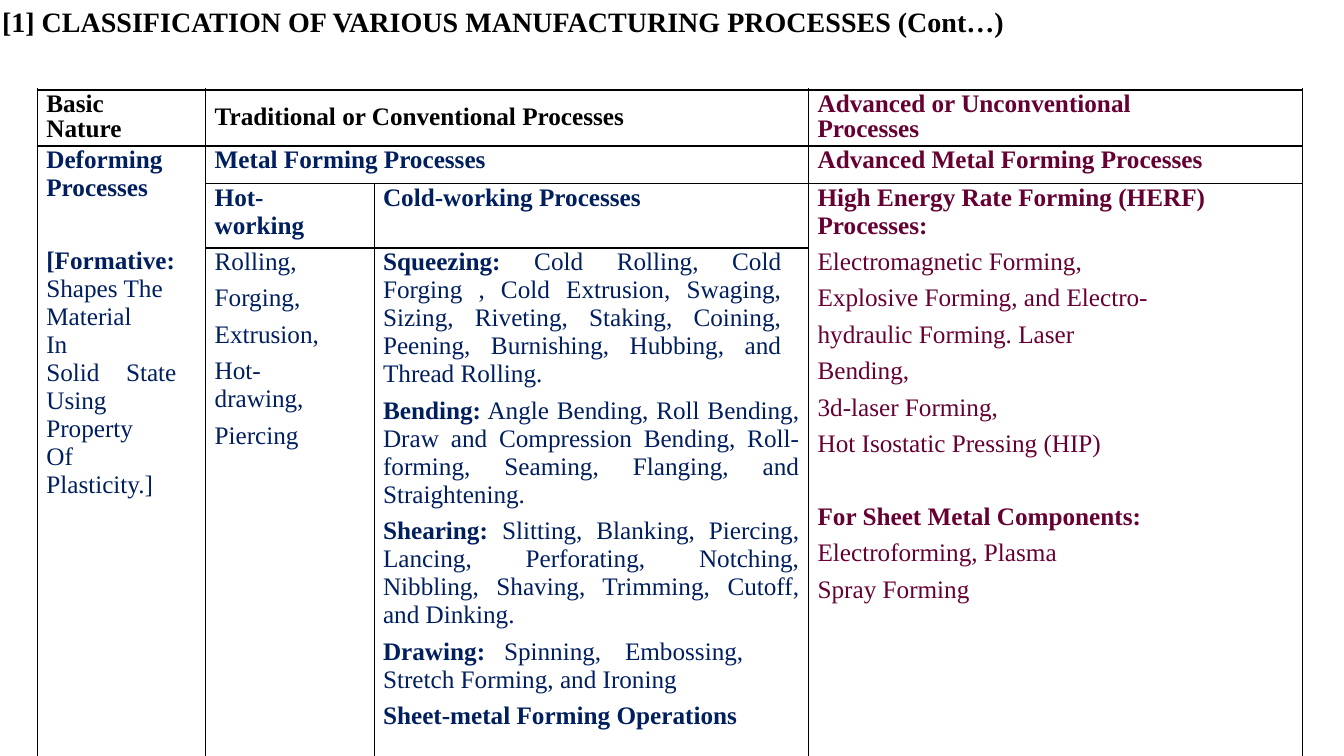
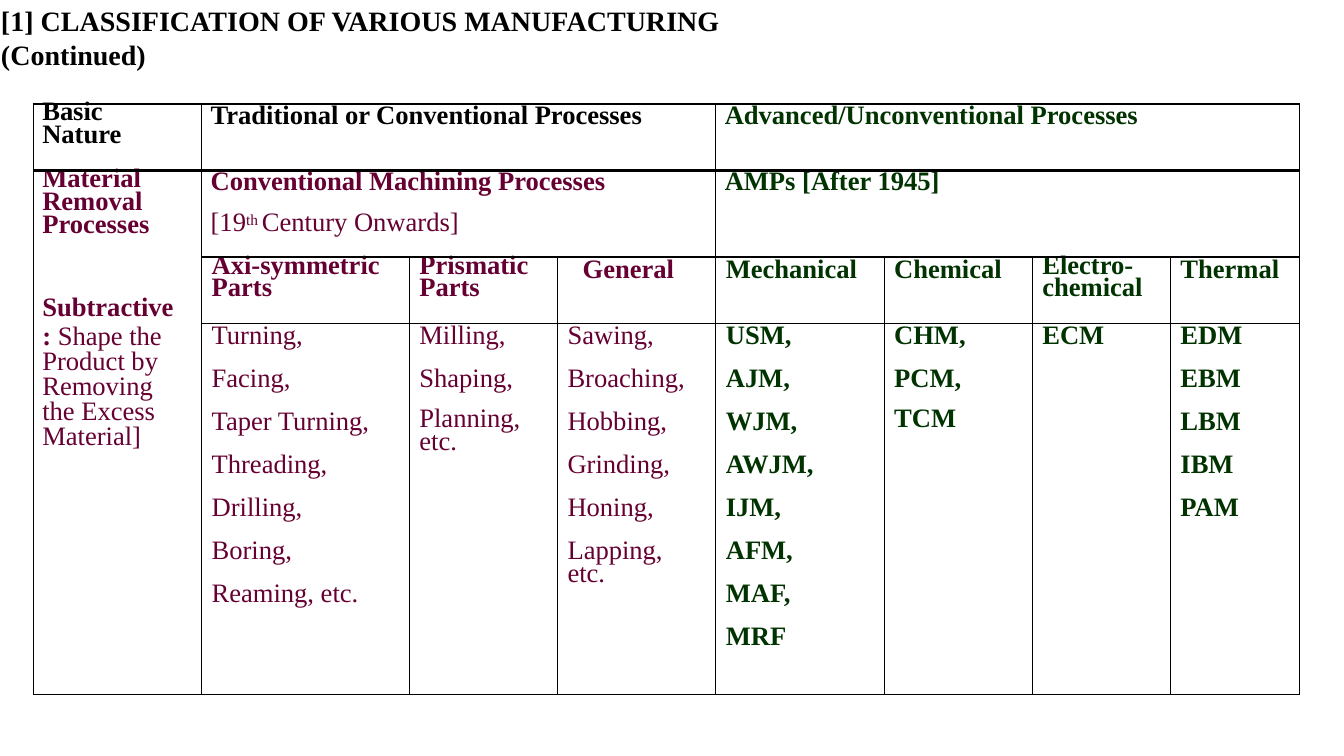
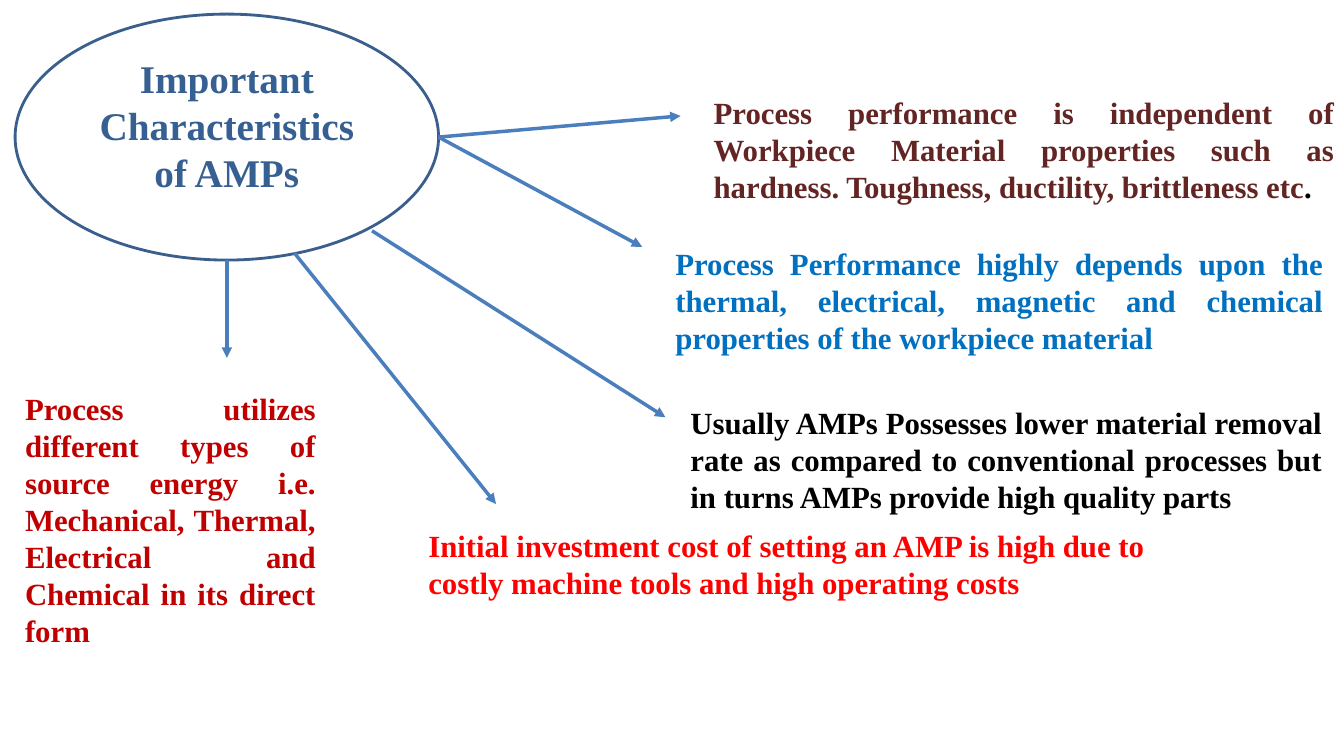
from lxml import etree
from pptx import Presentation
from pptx.dml.color import RGBColor
from pptx.enum.shapes import MSO_CONNECTOR, MSO_SHAPE
from pptx.enum.text import MSO_ANCHOR, MSO_AUTO_SIZE, PP_ALIGN
from pptx.oxml.ns import qn
from pptx.util import Inches, Pt

LEFT, MID, FULL = PP_ALIGN.LEFT, PP_ALIGN.CENTER, PP_ALIGN.JUSTIFY
TOP, CENTER = MSO_ANCHOR.TOP, MSO_ANCHOR.MIDDLE
FIXED = MSO_AUTO_SIZE.NONE
OVAL, LINE = MSO_SHAPE.OVAL, MSO_CONNECTOR.STRAIGHT

# Shared style
FONT = "Times New Roman"
BLACK, NAVY, WINE, GREEN = "000000", "001F5F", "660033", "003300"
RIM, ARROW = "3A5F8C", "4B7EBC"
PLAIN = "{2D5ABB26-0587-4C30-8999-92F81FD0307C}"
TITLE = "[1] CLASSIFICATION OF VARIOUS MANUFACTURING "


def tint(code):
    return RGBColor.from_string(code)


def box(at):
    return [Inches(n) for n in at]


def apply(item, values):
    for name, value in values.items():
        setattr(item, name, value)


def para(*runs, lead=None, gap=0, align=LEFT, tabs=(), inset=0):
    """A run that starts with * is bold, one that starts with ^ is raised."""
    return {"runs": runs, "lead": lead, "gap": gap, "align": align,
            "tabs": tabs, "inset": inset}


def stack(words, gap, bold=False):
    mark = "*" if bold else ""
    return [para(mark + word, gap=gap if i else 0)
            for i, word in enumerate(words)]


def add_run(p, text, size, color):
    bold, high = text.startswith("*"), text.startswith("^")
    for i, part in enumerate(text.lstrip("*^").split("\n")):
        if i:
            p.add_line_break()
        run = p.add_run()
        run.text = part
        apply(run.font, {"name": FONT, "size": Pt(size), "bold": bold})
        run.font.color.rgb = tint(color)
        if high:
            run.font._element.set("baseline", "26000")


def write(frame, paras, size, color, lead):
    frame.word_wrap = True
    for i, data in enumerate(paras):
        p = frame.add_paragraph() if i else frame.paragraphs[0]
        props = p._p.get_or_add_pPr()
        if data["inset"]:
            props.set("marR", str(Inches(data["inset"])))
        if data["tabs"]:
            stops = etree.SubElement(props, qn("a:tabLst"))
            for stop in data["tabs"]:
                etree.SubElement(stops, qn("a:tab"), pos=str(Inches(stop)), algn="l")
        apply(p, {"alignment": data["align"], "space_before": Pt(data["gap"]),
                  "line_spacing": Pt(data["lead"] or lead)})
        for text in data["runs"]:
            add_run(p, text, size, color)


def add_title(slide, text, at):
    title = slide.shapes.title
    title.left, title.top, title.width, title.height = box(at)
    frame = title.text_frame
    apply(frame, {"margin_left": 0, "margin_top": 0, "margin_right": 0,
                  "margin_bottom": 0, "vertical_anchor": TOP, "auto_size": FIXED})
    write(frame, [para("*" + text)], 20, BLACK, 24.3)


def add_grid(slide, at, cols, rows):
    size = (sum(cols), sum(rows))
    table = slide.shapes.add_table(len(rows), len(cols), *box(at + size)).table
    table._tbl.tblPr[0].text = PLAIN
    apply(table, {"first_row": False, "horz_banding": False})
    for col, width in zip(table.columns, cols):
        col.width = Inches(width)
    for row, height in zip(table.rows, rows):
        row.height = Inches(height)
    for cell in table.iter_cells():
        cell.fill.background()
        apply(cell, {"margin_left": 0, "margin_top": 0,
                     "margin_right": 0, "margin_bottom": 0})
    return table


def edge(cell, row, end, last):
    """Heavy rules around the header row, fine ones elsewhere."""
    widths = {"L": 0.75, "R": 0.75, "T": 2 if row < 2 else 1,
              "B": 2 if end == 0 else 0.75 if end == last else 1}
    props = cell._tc.get_or_add_tcPr()
    for i, (side, width) in enumerate(widths.items()):
        line = etree.Element(qn("a:ln" + side), w=str(Pt(width)))
        fill = etree.SubElement(line, qn("a:solidFill"))
        etree.SubElement(fill, qn("a:srgbClr"), val=BLACK)
        props.insert(i, line)


def fill_grid(table, cells, size, lead, anchor=TOP):
    last = len(table.rows) - 1
    for row, col, high, wide, color, paras, *left in cells:
        cell = table.cell(row, col)
        end = row + high - 1
        if high * wide > 1:
            cell.merge(table.cell(end, col + wide - 1))
        cell.margin_left = Inches(left[0] if left else 0.09)
        cell.vertical_anchor = TOP if row else anchor
        edge(cell, row, end, last)
        write(cell.text_frame, paras, size, color, lead)


def add_note(slide, at, runs, color, align=FULL):
    frame = slide.shapes.add_textbox(*box(at)).text_frame
    write(frame, [para(runs, align=align)], 22, color, 26.4)
    return frame


def add_arrow(slide, ends):
    line = slide.shapes.add_connector(LINE, *box(ends))
    line.line.width = Pt(2.5)
    line.line.color.rgb = tint(ARROW)
    etree.SubElement(line.line._get_or_add_ln(), qn("a:tailEnd"), type="triangle")
    etree.SubElement(line._element.spPr, qn("a:effectLst"))


def deforming(slide):
    add_title(slide, TITLE + "PROCESSES (Cont…)", (0.02, 0.04, 10.2, 0.34))
    table = add_grid(slide, (0.37, 0.89), (1.67, 1.67, 4.31, 4.9),
                     (0.56, 0.37, 0.64, 5.05))
    nature = [
        para("*Deforming\nProcesses"),
        para("*[Formative:", "\nShapes The\nMaterial\t\tIn\nSolid\tState\nUsing\n"
             "Property\t\tOf\nPlasticity.]", gap=32, tabs=(0.79, 1.1)),
    ]
    cold = [
        para("*Squeezing:", " Cold Rolling, Cold Forging , Cold Extrusion, Swaging, "
             "Sizing, Riveting, Staking, Coining, Peening, Burnishing, Hubbing, "
             "and Thread Rolling.", align=FULL, inset=0.27),
        para("*Bending:", " Angle Bending, Roll Bending, Draw and Compression "
             "Bending, Roll-forming, Seaming, Flanging, and Straightening.",
             gap=6, align=FULL, inset=0.09),
        para("*Shearing:", " Slitting, Blanking, Piercing, Lancing, Perforating, "
             "Notching, Nibbling, Shaving, Trimming, Cutoff, and Dinking.",
             gap=6, align=FULL, inset=0.09),
        para("*Drawing:", "\tSpinning,\tEmbossing,", gap=6, tabs=(1.2, 2.4)),
        para("Stretch Forming, and Ironing"),
        para("*Sheet-metal Forming Operations", gap=6),
    ]
    rapid = stack(["*High Energy Rate Forming (HERF)\nProcesses:",
                   "Electromagnetic Forming,", "Explosive Forming, and Electro-",
                   "hydraulic Forming. Laser", "Bending,", "3d-laser Forming,",
                   "Hot Isostatic Pressing (HIP)"], 6)
    rapid += [para("*For Sheet Metal Components:", gap=32),
              para("Electroforming, Plasma", gap=6), para("Spray Forming", gap=6)]
    hot = ["Rolling,", "Forging,", "Extrusion,", "Hot-\ndrawing,", "Piercing"]
    # row, column, rows spanned, columns spanned, colour, paragraphs
    fill_grid(table, [
        (0, 0, 1, 1, BLACK, [para("*Basic\nNature", lead=17.8)]),
        (0, 1, 1, 2, BLACK, [para("*Traditional or Conventional Processes", lead=18.5)]),
        (0, 3, 1, 1, WINE, [para("*Advanced or Unconventional\nProcesses", lead=17.8)]),
        (1, 0, 3, 1, NAVY, nature),
        (1, 1, 1, 2, NAVY, [para("*Metal Forming Processes")]),
        (1, 3, 1, 1, WINE, [para("*Advanced Metal Forming Processes")]),
        (2, 1, 1, 1, NAVY, [para("*Hot-\nworking")]),
        (2, 2, 1, 1, NAVY, [para("*Cold-working Processes")]),
        (2, 3, 2, 1, WINE, rapid),
        (3, 1, 1, 1, NAVY, stack(hot, 6)),
        (3, 2, 1, 1, NAVY, cold),
    ], 18, 20, CENTER)


def removal(slide):
    add_title(slide, TITLE + "(Continued)", (0.01, 0.03, 8.5, 0.7))
    table = add_grid(slide, (0.33, 1.03),
                     (1.67, 2.06, 1.47, 1.57, 1.67, 1.47, 1.37, 1.28),
                     (0.66, 0.86, 0.66, 3.68))
    gap, tight = 11.6, 16.3
    nature = [
        para("*Material\nRemoval\nProcesses", lead=tight),
        para("*Subtractive", lead=17.8, gap=42),
        para("*:", " Shape the\nProduct by\nRemoving\nthe Excess\nMaterial]",
             lead=17.8, gap=2.9),
    ]
    usual = [para("*Conventional Machining Processes", lead=18.6),
             para("[19", "^th ", "Century Onwards]", gap=10.4)]
    flat = stack(["Milling,", "Shaping,"], gap)
    flat.append(para("Planning,\netc.", lead=tight, gap=12.1))
    other = stack(["Sawing,", "Broaching,", "Hobbing,", "Grinding,", "Honing,",
                   "Lapping,"], gap)
    other.append(para("etc.", lead=tight))
    round_ = ["Turning,", "Facing,", "Taper Turning,", "Threading,", "Drilling,",
              "Boring,", "Reaming, etc."]
    force = ["USM,", "AJM,", "WJM,", "AWJM,", "IJM,", "AFM,", "MAF,", "MRF"]
    heat = ["EDM", "EBM", "LBM", "IBM", "PAM"]
    etch = stack(["CHM,", "PCM,"], gap, True) + [para("*TCM", gap=9.3)]
    cells = [
        (0, 0, 1, 1, BLACK, [para("*Basic\nNature", lead=tight)]),
        (0, 1, 1, 3, BLACK, [para("*Traditional or Conventional Processes", lead=18.6)]),
        (0, 4, 1, 4, GREEN, [para("*Advanced/Unconventional Processes", lead=18.6)]),
        (1, 0, 3, 1, WINE, nature),
        (1, 1, 1, 3, WINE, usual),
        (1, 4, 1, 4, GREEN, [para("*AMPs [After 1945]", lead=18.6)]),
    ]
    # Column heads with the lists below them
    groups = [
        ("Axi-symmetric\nParts", stack(round_, gap)),
        ("Prismatic\nParts", flat),
        ("General", other),
        ("Mechanical", stack(force, gap, True)),
        ("Chemical", etch),
        ("Electro-\nchemical", [para("*ECM")]),
        ("Thermal", stack(heat, gap, True)),
    ]
    for col, (head, items) in enumerate(groups, 1):
        color = WINE if col < 4 else GREEN
        lead = tight if "\n" in head else None
        left = 0.25 if head == "General" else 0.1
        cells += [(2, col, 1, 1, color, [para("*" + head, lead=lead)], left),
                  (3, col, 1, 1, color, items, 0.1)]
    fill_grid(table, cells, 19, 19.1)


def traits(slide):
    # Central theme
    oval = slide.shapes.add_shape(OVAL, *box((0.15, 0.14, 4.2, 2.44)))
    oval.shadow.inherit = False
    oval.fill.background()
    oval.line.color.rgb = tint(RIM)
    oval.line.width = Pt(2)
    apply(oval.text_frame, {"vertical_anchor": CENTER, "margin_bottom": Inches(0.3)})
    write(oval.text_frame, [para("*Important Characteristics of AMPs", align=MID)],
          28, "376092", 33.6)

    # Arrows to the notes
    for ends in [(4.35, 1.36, 6.75, 1.15), (4.35, 1.36, 6.37, 2.45),
                 (2.25, 2.58, 2.25, 3.55), (3.69, 2.29, 6.6, 4.14),
                 (2.92, 2.51, 4.92, 5)]:
        add_arrow(slide, ends)

    # Notes
    first = add_note(slide, (6.98, 0.88, 6.35, 1.21),
                     "*Process performance is independent of Workpiece Material "
                     "properties such as hardness. Toughness, ductility, "
                     "brittleness etc", "632523")
    add_run(first.paragraphs[0], "*.", 22, BLACK)
    add_note(slide, (6.6, 2.38, 6.62, 1.21),
             "*Process Performance highly depends upon the thermal, electrical, "
             "magnetic and chemical properties of the workpiece material", "0070C0")
    add_note(slide, (0.15, 3.82, 3.08, 2.69),
             "*Process utilizes different types of source energy i.e. Mechanical, "
             "Thermal, Electrical and Chemical in its direct form", "C00000")
    add_note(slide, (6.75, 3.96, 6.46, 1.21),
             "*Usually AMPs Possesses lower material removal rate as compared to "
             "conventional processes but in turns AMPs provide high quality parts",
             BLACK)
    add_note(slide, (4.15, 5.18, 8.11, 0.84),
             "*Initial investment cost of setting an AMP is high due to costly "
             "machine tools and high operating costs", "FF0000", LEFT)


def main():
    deck = Presentation()
    deck.slide_width, deck.slide_height = box((13.33, 7.5))
    titled, blank = deck.slide_layouts[5], deck.slide_layouts[6]
    for build, layout in [(deforming, titled), (removal, titled), (traits, blank)]:
        build(deck.slides.add_slide(layout))
    deck.save("out.pptx")


if __name__ == "__main__":
    main()
